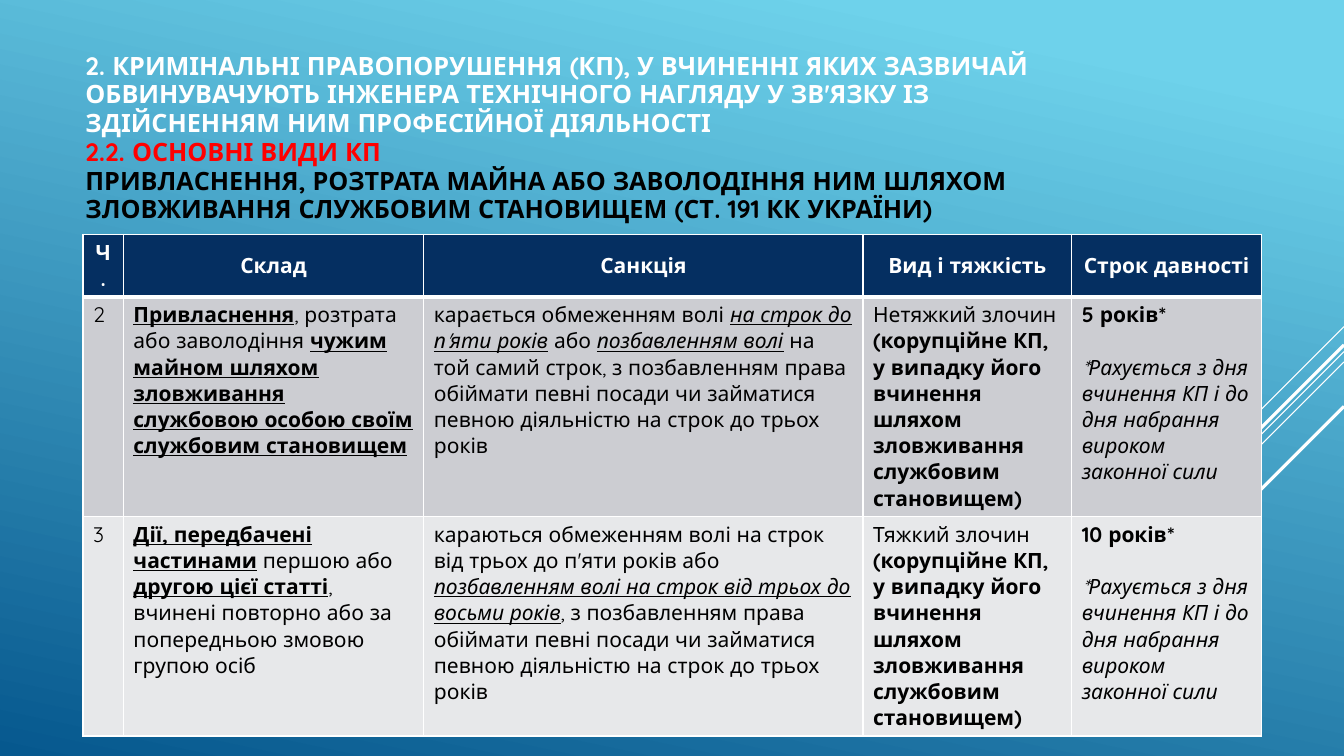
from lxml.etree import SubElement
from pptx import Presentation
from pptx.dml.color import RGBColor as RGB
from pptx.enum.shapes import MSO_CONNECTOR as CONN
from pptx.enum.text import MSO_ANCHOR as ANCHOR, MSO_AUTO_SIZE as AUTO, PP_ALIGN as ALIGN
from pptx.oxml.ns import qn
from pptx.util import Cm, Pt

FONT = "Quicksand"
COLORS = {"white": "FFFFFF", "black": "000000", "red": "FF0000", "navy": "052F61",
          "sky": "6ED2EB", "deep": "06588E", "band1": "CCCDD2", "band2": "E7E8EA"}
CORRUPTION = ("(корупційне КП, у випадку його вчинення шляхом зловживання "
              "службовим становищем)", "b")
NOTE = ("*Рахується з дня вчинення КП і до дня набрання вироком законної сили", "i")
HEADERS = ["Ч.", "Склад", "Санкція", "Вид і тяжкість", "Строк давності"]
ROWS = [
    [[[("2", "")]],
     [[("Привласнення", "bu"), (", розтрата або заволодіння ", ""),
       ("чужим майном шляхом зловживання службовою особою своїм "
        "службовим становищем", "bu")]],
     [[("карається обмеженням волі ", ""), ("на строк до п'яти років", "iu"),
       (" або ", ""), ("позбавленням волі", "iu"), (" ", "b"),
       ("на той самий строк, з позбавленням права обіймати певні посади чи "
        "займатися певною діяльністю на строк до трьох років", "")]],
     [[("Нетяжкий злочин ", ""), CORRUPTION]],
     [[("5 років*", "b")], [NOTE]]],
    [[[("3", "")]],
     [[("Дії, передбачені частинами", "bu"), (" першою або ", ""),
       ("другою цієї статті", "bu"),
       (", вчинені повторно або за попередньою змовою групою осіб", "")]],
     [[("караються обмеженням волі на строк від трьох до п'яти років або ", ""),
       ("позбавленням волі на строк від трьох до восьми років", "iu"),
       (", з позбавленням права обіймати певні посади чи займатися певною "
        "діяльністю на строк до трьох років", "")]],
     [[("Тяжкий злочин ", ""), CORRUPTION]],
     [[("10 років*", "b")], [NOTE]]],
]
TITLE = [
    ("2. КРИМІНАЛЬНІ ПРАВОПОРУШЕННЯ (КП), У ВЧИНЕННІ ЯКИХ ЗАЗВИЧАЙ ОБВИНУВАЧУЮТЬ "
     "ІНЖЕНЕРА ТЕХНІЧНОГО НАГЛЯДУ У ЗВ'ЯЗКУ ІЗ", "white"),
    ("ЗДІЙСНЕННЯМ НИМ ПРОФЕСІЙНОЇ ДІЯЛЬНОСТІ", "white"),
    ("2.2. ОСНОВНІ ВИДИ КП", "red"),
    ("ПРИВЛАСНЕННЯ, РОЗТРАТА МАЙНА АБО ЗАВОЛОДІННЯ НИМ ШЛЯХОМ ЗЛОВЖИВАННЯ "
     "СЛУЖБОВИМ СТАНОВИЩЕМ (СТ. 191 КК УКРАЇНИ)", "black"),
]


def set_font(font, size, color, bold):
    font.name, font.size, font.bold = FONT, Pt(size), bold
    font.color.rgb = RGB.from_string(COLORS[color])


def format_cell(cell, fill, bottom):
    cell.fill.solid()
    cell.fill.fore_color.rgb = RGB.from_string(COLORS[fill])
    tcPr = cell._tc.get_or_add_tcPr()
    for i, (side, width) in enumerate([("lnL", 1), ("lnR", 1), ("lnT", 1), ("lnB", bottom)]):
        ln = SubElement(tcPr, qn(f"a:{side}"), w=str(Pt(width)))
        SubElement(SubElement(ln, qn("a:solidFill")), qn("a:srgbClr"), val=COLORS["white"])
        tcPr.insert(i, ln)


prs = Presentation()
prs.slide_width, prs.slide_height = Cm(33.87), Cm(19.05)
s = prs.slides.add_slide(prs.slide_layouts[5])

bg = s.background.fill
bg.gradient()
bg.gradient_angle = 258
for stop, position, color in zip(bg.gradient_stops, (0.1, 1), ("sky", "deep")):
    stop.position = position
    stop.color.rgb = RGB.from_string(COLORS[color])

for top, reach, width in [(8.23, 2.54, 0.75), (8.86, 8.28, 0.75), (9.12, 5.26, 0.75),
                          (8.69, 4.85, 2.25), (10.24, 3.53, 2.25)]:
    ray = s.shapes.add_connector(CONN.STRAIGHT, Cm(33.87), Cm(top),
                                 Cm(33.87 - reach), Cm(top + reach))
    ray.line.color.rgb = RGB.from_string(COLORS["white"])
    ray.line.width = Pt(width)
    SubElement(ray._element.spPr, qn("a:effectLst"))

title = s.shapes.title
title.left, title.top, title.width, title.height = Cm(1.9), Cm(1.1), Cm(27.94), Cm(4.77)
tf = title.text_frame
tf.word_wrap, tf.auto_size, tf.vertical_anchor = True, AUTO.NONE, ANCHOR.MIDDLE
p = tf.paragraphs[0]
p.alignment, p.line_spacing = ALIGN.LEFT, 0.95
for i, (text, color) in enumerate(TITLE):
    if i:
        p.add_line_break()
    r = p.add_run()
    r.text = text
    set_font(r.font, 18, color, True)

col_widths, row_heights = [1.02, 7.57, 11.07, 5.26, 4.78], [1.4, 4.88, 5.08]
table = s.shapes.add_table(3, 5, Cm(2.09), Cm(5.9), Cm(sum(col_widths)),
                           Cm(sum(row_heights))).table
for col, width in zip(table.columns, col_widths):
    col.width = Cm(width)
for row, height in zip(table.rows, row_heights):
    row.height = Cm(height)

for cell, text in zip(table.rows[0].cells, HEADERS):
    format_cell(cell, "navy", 3)
    cell.vertical_anchor = ANCHOR.MIDDLE
    p = cell.text_frame.paragraphs[0]
    p.text, p.alignment = text, ALIGN.CENTER
    set_font(p.font, 15, "white", True)

for n, contents in enumerate(ROWS, 1):
    for cell, paragraphs in zip(table.rows[n].cells, contents):
        format_cell(cell, f"band{n}", 1)
        tf = cell.text_frame
        for i, runs in enumerate(paragraphs):
            p = tf.add_paragraph() if i else tf.paragraphs[0]
            p.space_before = Pt(18.75 * i)
            set_font(p.font, 15, "black", False)
            for text, style in runs:
                r = p.add_run()
                r.text = text
                if "b" in style:
                    r.font.bold = True
                if "i" in style:
                    r.font.italic = True
                if "u" in style:
                    r.font.underline = True

prs.save("out.pptx")
